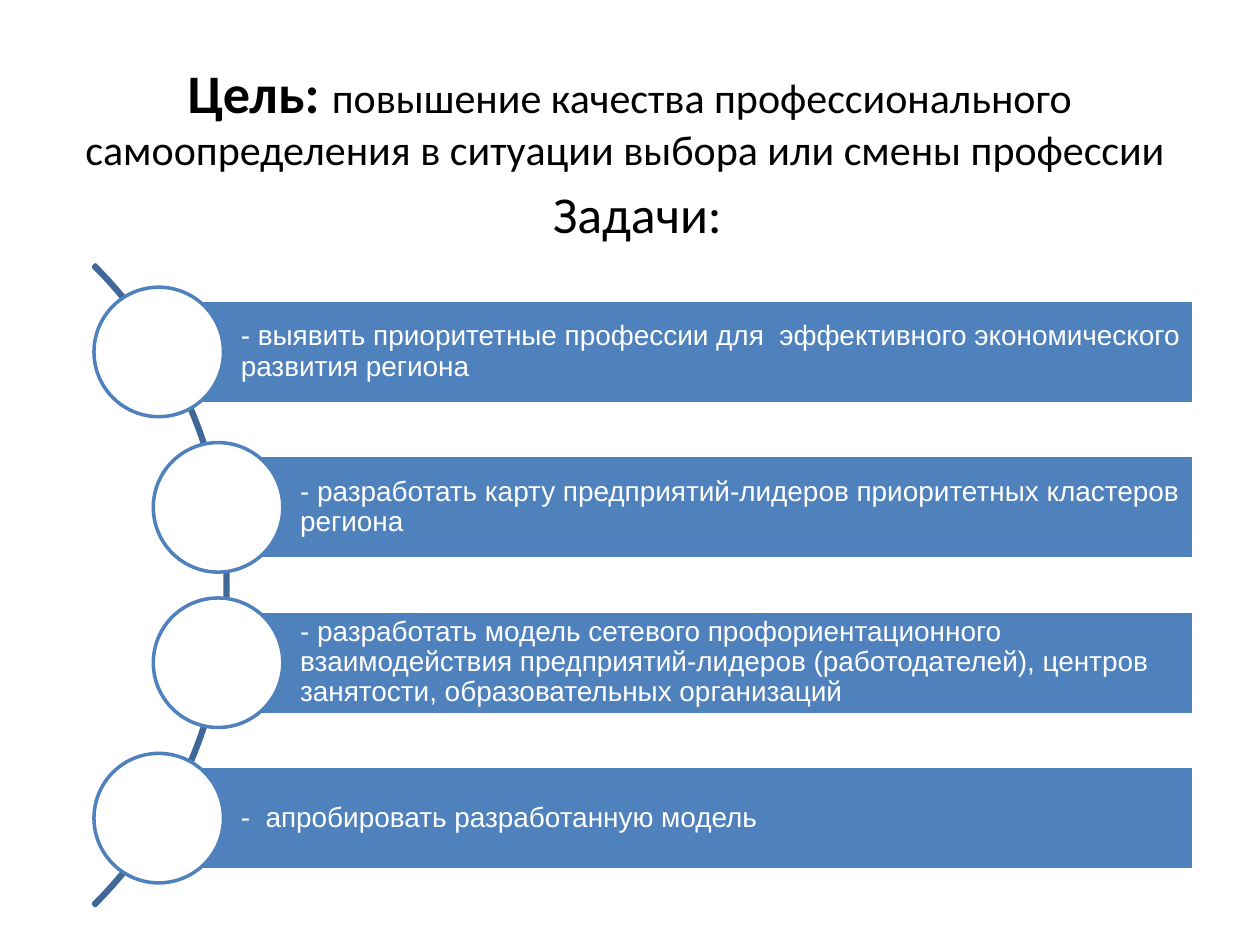
from dataclasses import dataclass

from pptx import Presentation
from pptx.dml.color import RGBColor
from pptx.enum.shapes import MSO_SHAPE
from pptx.enum.text import MSO_ANCHOR, PP_ALIGN
from pptx.util import Pt

ARC, BAR, CIRCLE = MSO_SHAPE.BLOCK_ARC, MSO_SHAPE.RECTANGLE, MSO_SHAPE.OVAL
TOP, MIDDLE = MSO_ANCHOR.TOP, MSO_ANCHOR.MIDDLE
CENTER, LEFT = PP_ALIGN.CENTER, PP_ALIGN.LEFT


@dataclass(frozen=True)
class Theme:
    ink: str = "000000"
    paper: str = "FFFFFF"
    accent: str = "4F81BD"
    arc: str = "3F6797"
    heading_font: str = "Calibri"
    task_font: str = "Arial"
    goal_label_size: float = 31
    goal_size: float = 24
    tasks_heading_size: float = 29.6
    task_size: float = 16
    outline: float = 2


class SlideBuilder:
    def __init__(self, slide, theme):
        self.slide = slide
        self.theme = theme

    def fill_text(self, frame, runs, font, color, anchor, paragraph_format, insets):
        left, top, right, bottom = map(Pt, insets)
        frame_format = {
            "word_wrap": True, "vertical_anchor": anchor,
            "margin_left": left, "margin_top": top,
            "margin_right": right, "margin_bottom": bottom,
        }
        for key, value in frame_format.items():
            setattr(frame, key, value)
        paragraph = frame.paragraphs[0]
        for key, value in paragraph_format.items():
            setattr(paragraph, key, value)
        for words, size, bold in runs:
            run = paragraph.add_run()
            run.text = words
            run_format = {"name": font, "size": Pt(size), "bold": bold}
            for key, value in run_format.items():
                setattr(run.font, key, value)
            run.font.color.rgb = RGBColor.from_string(color)
        return paragraph

    def heading(self, box, runs, anchor, indent=0, **paragraph_format):
        frame = self.slide.shapes.add_textbox(*map(Pt, box)).text_frame
        paragraph = self.fill_text(
            frame, runs, self.theme.heading_font, self.theme.ink, anchor,
            {"alignment": CENTER, **paragraph_format}, (7.2, 3.6, 7.2, 3.6))
        paragraph._p.get_or_add_pPr().set("marL", str(Pt(indent)))

    def figure(self, kind, box, line, fill=None):
        figure = self.slide.shapes.add_shape(kind, *map(Pt, box))
        figure.shadow.inherit = False
        if fill:
            figure.fill.solid()
            figure.fill.fore_color.rgb = RGBColor.from_string(fill)
        else:
            figure.fill.background()
        figure.line.color.rgb = RGBColor.from_string(line)
        figure.line.width = Pt(self.theme.outline)
        return figure

    def arc(self, box, start, end, thickness):
        arc = self.figure(ARC, box, self.theme.arc)
        for index, value in enumerate((start, end, thickness)):
            arc.adjustments[index] = value

    def task(self, words, left, right, middle, height, diameter):
        theme = self.theme
        bar = self.figure(BAR, (left, middle - height / 2, right - left, height),
                          theme.paper, theme.accent)
        self.fill_text(bar.text_frame, [(words, theme.task_size, False)],
                       theme.task_font, theme.paper, MIDDLE,
                       {"alignment": LEFT, "line_spacing": 0.9},
                       (46.9, 2.9, 2.9, 2.9))
        radius = diameter / 2
        self.figure(CIRCLE, (left - radius, middle - radius, diameter, diameter),
                    theme.accent, theme.paper)


def main():
    theme = Theme()
    presentation = Presentation()
    presentation.slide_width, presentation.slide_height = Pt(720), Pt(540)
    builder = SlideBuilder(
        presentation.slides.add_slide(presentation.slide_layouts[6]), theme)

    builder.heading((36, 21.6, 648, 90), [
        ("Цель: ", theme.goal_label_size, True),
        ("повышение качества профессионального самоопределения "
         "в ситуации выбора или смены профессии ", theme.goal_size, False),
    ], MIDDLE)
    builder.heading((36, 104.4, 648, 44),
                    [("Задачи:", theme.tasks_heading_size, False)],
                    TOP, indent=8.6, line_spacing=0.9, space_before=Pt(3.6))

    builder.arc((-387.4, 75.6, 517.7, 517.7), 189, 27, 0.003)

    outer, inner = 90.7, 124.6
    first_middle, pitch = 201.1, 88.8
    tasks = [
        (outer, "- выявить приоритетные профессии для  эффективного "
                "экономического развития региона"),
        (inner, "- разработать карту предприятий-лидеров приоритетных "
                "кластеров региона"),
        (inner, "- разработать модель сетевого профориентационного "
                "взаимодействия предприятий-лидеров (работодателей), центров "
                "занятости, образовательных организаций"),
        (outer, "-  апробировать разработанную модель"),
    ]
    for index, (left, words) in enumerate(tasks):
        builder.task(words, left, right=682.4, middle=first_middle + index * pitch,
                     height=59.2, diameter=74)

    presentation.save("out.pptx")


if __name__ == "__main__":
    main()
